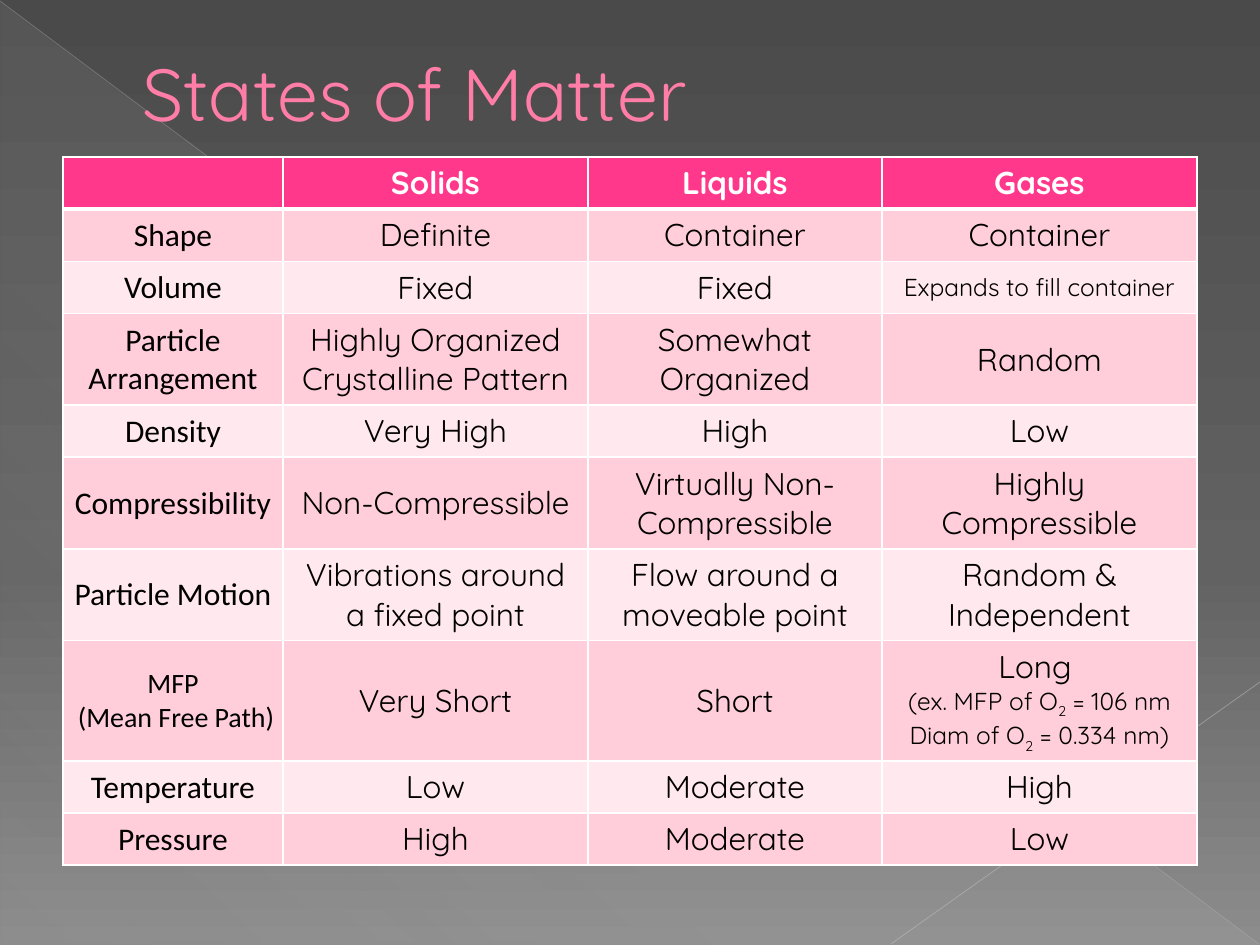
from pptx import Presentation
from pptx.dml.color import RGBColor
from pptx.enum.shapes import MSO_CONNECTOR as Connector, MSO_SHAPE as Shape
from pptx.enum.text import MSO_ANCHOR as Anchor, PP_ALIGN as Align
from pptx.oxml import parse_xml
from pptx.oxml.ns import nsdecls, qn
from pptx.util import Pt

SCALE = 914400 / 126
LABEL_FONT, TEXT_FONT = "Calibri", "Quicksand"
PINK, ROSE, PALE, WHITE, BLACK = "FF388C", "FFCEDA", "FFE8EE", "FFFFFF", "000000"

COLUMNS = [220, 305, 294, 315]
ROWS = [30] + [52] * 9
STATES = [
    ["", "Solids", "Liquids", "Gases"],
    ["Shape", "Definite", "Container", "Container"],
    ["Volume", "Fixed", "Fixed", [("Expands to fill container", 14)]],
    ["Particle Arrangement", "Highly Organized Crystalline Pattern", "Somewhat Organized", "Random"],
    ["Density", "Very High", "High", "Low"],
    ["Compressibility", "Non-Compressible", "Virtually Non-Compressible", "Highly Compressible"],
    ["Particle Motion", "Vibrations around a fixed point", "Flow around a moveable point", "Random & Independent"],
    [[("MFP", 16), (" (Mean Free Path)", 16)], "Very Short", "Short",
     [("Long ", 18), ("(ex. MFP of O~2~ = 106 nm", 14), ("Diam of O~2~ = 0.334 nm)", 14)]],
    ["Temperature", "Low", "Moderate", "High"],
    ["Pressure", "High", "Moderate", "Low"],
]


def px(length):
    return round(length * SCALE)


def rgb(code):
    return RGBColor.from_string(code)


def solid(code, alpha=100):
    return (f'<a:solidFill><a:srgbClr val="{code}"><a:alpha val="{alpha * 1000}"/>'
            '</a:srgbClr></a:solidFill>')


def outline(tag, code, width, alpha=100):
    return parse_xml(f'<a:{tag} {nsdecls("a")} w="{Pt(width)}">{solid(code, alpha)}</a:{tag}>')


class SlideBuilder:
    """Holds the style and the current slide, and draws each kind of element."""

    def __init__(self, deck):
        self.page = deck.slides.add_slide(deck.slide_layouts[5])

    def gradient(self, fill, stops, angle):
        fill.gradient()
        fill.gradient_angle = 0
        element = fill._fill._gradFill
        element.find(qn("a:lin")).set("ang", str(angle * 60000))
        marks = "".join(
            f'<a:gs pos="{place * 1000}"><a:srgbClr val="{code}"><a:alpha val="{alpha * 1000}"/>'
            "</a:srgbClr></a:gs>" for place, code, alpha in stops)
        element.replace(element.find(qn("a:gsLst")),
                        parse_xml(f'<a:gsLst {nsdecls("a")}>{marks}</a:gsLst>'))

    def background(self, stops, angle):
        self.gradient(self.page.background.fill, stops, angle)

    def triangle(self, left, top, width, height, stops, angle):
        box = self.page.shapes.add_shape(Shape.RIGHT_TRIANGLE, *map(px, (left, top, width, height)))
        box.shadow.inherit = False
        box.line.fill.background()
        self.gradient(box.fill, stops, angle)

    def line(self, start, end, code, width, alpha):
        rule = self.page.shapes.add_connector(Connector.STRAIGHT, *map(px, start + end))
        properties = rule._element.spPr
        properties.append(outline("ln", code, width, alpha))
        properties.append(parse_xml(f'<a:effectLst {nsdecls("a")}/>'))

    def span(self, para, text, font, size, code, bold=False):
        span = para.add_run()
        span.text = text
        span.font.name = font
        span.font.size = Pt(size)
        span.font.bold = bold
        span.font.color.rgb = rgb(code)
        return span

    def title(self, text, left, top, width, height):
        box = self.page.shapes.title
        box._element.getparent().append(box._element)
        box.left, box.top, box.width, box.height = map(px, (left, top, width, height))
        box.text_frame.vertical_anchor = Anchor.MIDDLE
        para = box.text_frame.paragraphs[0]
        para.alignment = Align.LEFT
        indent = para._p.get_or_add_pPr()
        indent.set("marL", str(px(67)))
        indent.set("indent", "0")
        span = self.span(para, text, TEXT_FONT, 42, "FF7DA7")
        span._r.get_or_add_rPr().insert(0, outline("ln", "B12761", 0.5))

    def cell(self, cell, content, fill, font, code, header):
        properties = cell._tc.get_or_add_tcPr()
        for side in "LRTB":
            width = 3 if header and side == "B" else 1
            properties.append(outline(f"ln{side}", WHITE, width))
        cell.fill.solid()
        cell.fill.fore_color.rgb = rgb(fill)
        cell.vertical_anchor = Anchor.MIDDLE
        lines = [(content, 18)] if isinstance(content, str) else content
        for index, (text, size) in enumerate(lines):
            frame = cell.text_frame
            para = frame.add_paragraph() if index else frame.paragraphs[0]
            para.alignment = Align.CENTER
            for order, part in enumerate(text.split("~") if text else []):
                span = self.span(para, part, font, size, code, header)
                if order % 2:
                    span._r.get_or_add_rPr().set("baseline", "-25000")

    def table(self, rows, left, top, width, height):
        frame = self.page.shapes.add_table(len(rows), len(COLUMNS), *map(px, (left, top, width, height)))
        table = frame.table
        table.horz_banding = False
        for column, size in zip(table.columns, COLUMNS):
            column.width = px(size)
        for row, size in zip(table.rows, ROWS):
            row.height = px(size)
        frame.height = px(height)
        for r, contents in enumerate(rows):
            header = r == 0
            fill = PINK if header else (ROSE if r % 2 else PALE)
            for c, content in enumerate(contents):
                cell = table.cell(r, c)
                label = c == 0 and not header
                if label:
                    cell.margin_left = cell.margin_right = cell.margin_top = px(1)
                    cell.margin_bottom = 0
                font = LABEL_FONT if label else TEXT_FONT
                self.cell(cell, content, fill, font, WHITE if header else BLACK, header)


def main():
    deck = Presentation()
    deck.slide_width, deck.slide_height = px(1260), px(945)
    builder = SlideBuilder(deck)
    builder.background([(0, "4A4A4A", 100), (60, "626262", 100), (100, "8C8C8C", 100)], 90)
    builder.triangle(1, 2, 1258, 942, [(0, "D2D2D2", 10), (70, "D2D2D2", 8), (100, "D2D2D2", 1)], 133)
    builder.line((0, 1), (1259, 944), "BFBFBF", 0.39, 35)
    builder.line((1260, 682), (891, 944), "C6C6C6", 0.47, 45)
    builder.title("States of Matter", 63, 37, 1134, 110)
    builder.table(STATES, 63, 157, 1134, 679)
    deck.save("out.pptx")


if __name__ == "__main__":
    main()
